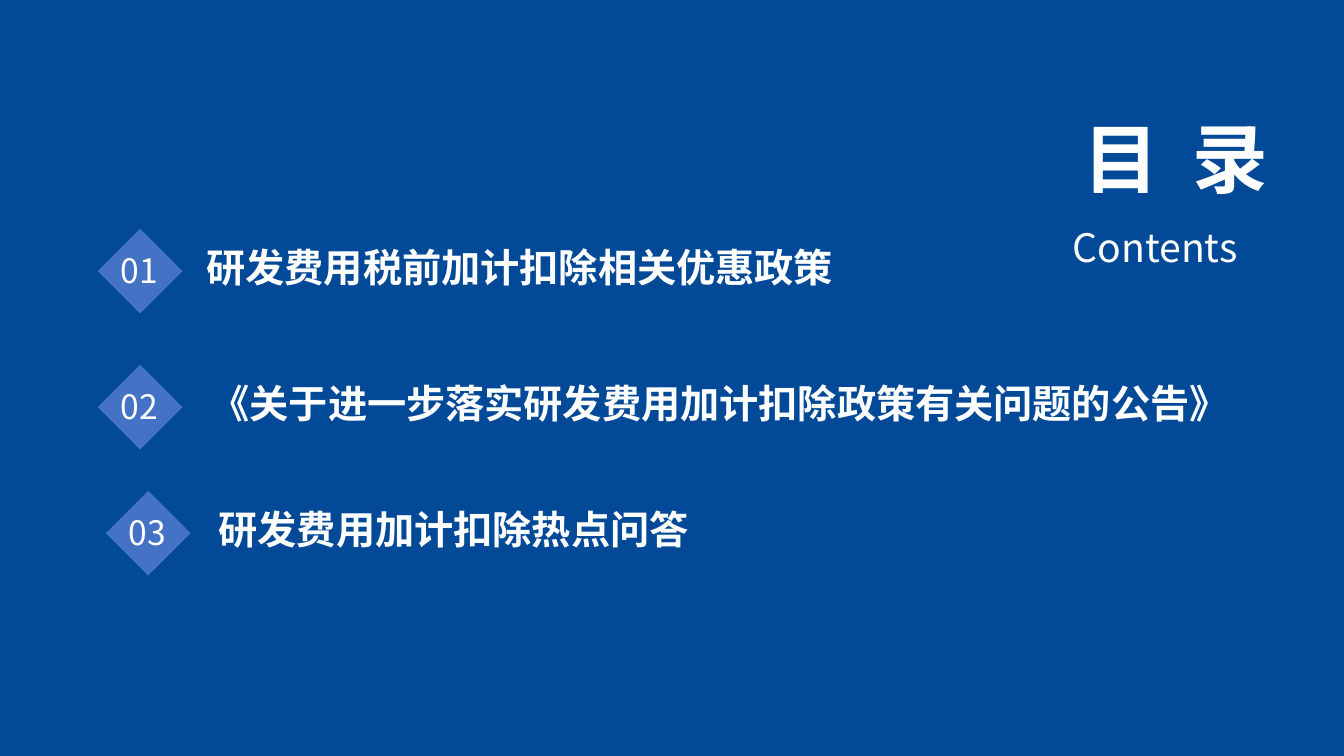
from lxml import etree
from pptx import Presentation
from pptx.dml.color import RGBColor
from pptx.enum import shapes, text
from pptx.oxml import ns
from pptx.util import Inches, Pt

FONT = "Noto Sans CJK SC"
COLORS = {"background": "024997", "diamond": "4472C4", "text": "FFFFFF"}
ENTRIES = [
    ("01", "研发费用税前加计扣除相关优惠政策", 0.97, 2.27, 0.98, 7.18),
    ("02", "《关于进一步落实研发费用加计扣除政策有关问题的公告》", 0.97, 3.62, 1.02, 11.08),
    ("03", "研发费用加计扣除热点问答", 1.05, 4.87, 1.02, 11.08),
]


def color(name):
    """Return the named colour."""
    return RGBColor.from_string(COLORS[name])


def write(shape, words, size, align, bold=False, spacing=0, line_spacing=1.0):
    """Fill a shape with one formatted paragraph."""
    frame = shape.text_frame
    frame.text = words
    frame.word_wrap = True
    frame.auto_size = text.MSO_AUTO_SIZE.NONE
    frame.vertical_anchor = text.MSO_ANCHOR.MIDDLE
    paragraph = frame.paragraphs[0]
    paragraph.alignment = align
    paragraph.line_spacing = line_spacing
    font = paragraph.font
    font.name, font.size, font.bold = FONT, Pt(size), bold
    font.color.rgb = color("text")
    properties = paragraph._p.pPr.find(ns.qn("a:defRPr"))
    properties.set("spc", str(spacing * 100))
    etree.SubElement(properties, ns.qn("a:ea")).set("typeface", FONT)


def add_heading(slide, left, top):
    """Place the title and its subtitle."""
    title = slide.shapes.title
    title.left, title.top = Inches(left), Inches(top)
    title.width, title.height = Inches(2.71), Inches(1.12)
    write(title, "目 录", 54, text.PP_ALIGN.RIGHT, bold=True, spacing=6)
    subtitle = slide.shapes.add_textbox(
        Inches(left + 0.57), Inches(top + 0.97), Inches(1.99), Inches(0.72))
    write(subtitle, "Contents", 28, text.PP_ALIGN.JUSTIFY, line_spacing=1.5)


def add_entry(slide, number, words, left, top, indent, width):
    """Place a numbered diamond and its label."""
    diamond = slide.shapes.add_shape(
        shapes.MSO_SHAPE.DIAMOND, Inches(left), Inches(top), Inches(0.84), Inches(0.84))
    diamond.shadow.inherit = False
    diamond.fill.solid()
    diamond.fill.fore_color.rgb = color("diamond")
    diamond.line.fill.background()
    badge = slide.shapes.add_shape(
        shapes.MSO_SHAPE.OVAL, Inches(left - 0.24), Inches(top + 0.05), Inches(1.3), Inches(0.71))
    badge.shadow.inherit = False
    badge.fill.background()
    badge.line.fill.background()
    write(badge, number, 24, text.PP_ALIGN.CENTER)
    label = slide.shapes.add_textbox(
        Inches(left + indent), Inches(top + 0.09), Inches(width), Inches(0.57))
    write(label, words, 28, text.PP_ALIGN.LEFT, bold=True)


def main():
    """Build the contents slide."""
    presentation = Presentation()
    presentation.slide_width, presentation.slide_height = Inches(13.33), Inches(7.5)
    slide = presentation.slides.add_slide(presentation.slide_layouts[5])
    slide.background.fill.solid()
    slide.background.fill.fore_color.rgb = color("background")
    add_heading(slide, 9.97, 1)
    for entry in ENTRIES:
        add_entry(slide, *entry)
    presentation.save("out.pptx")


if __name__ == "__main__":
    main()
